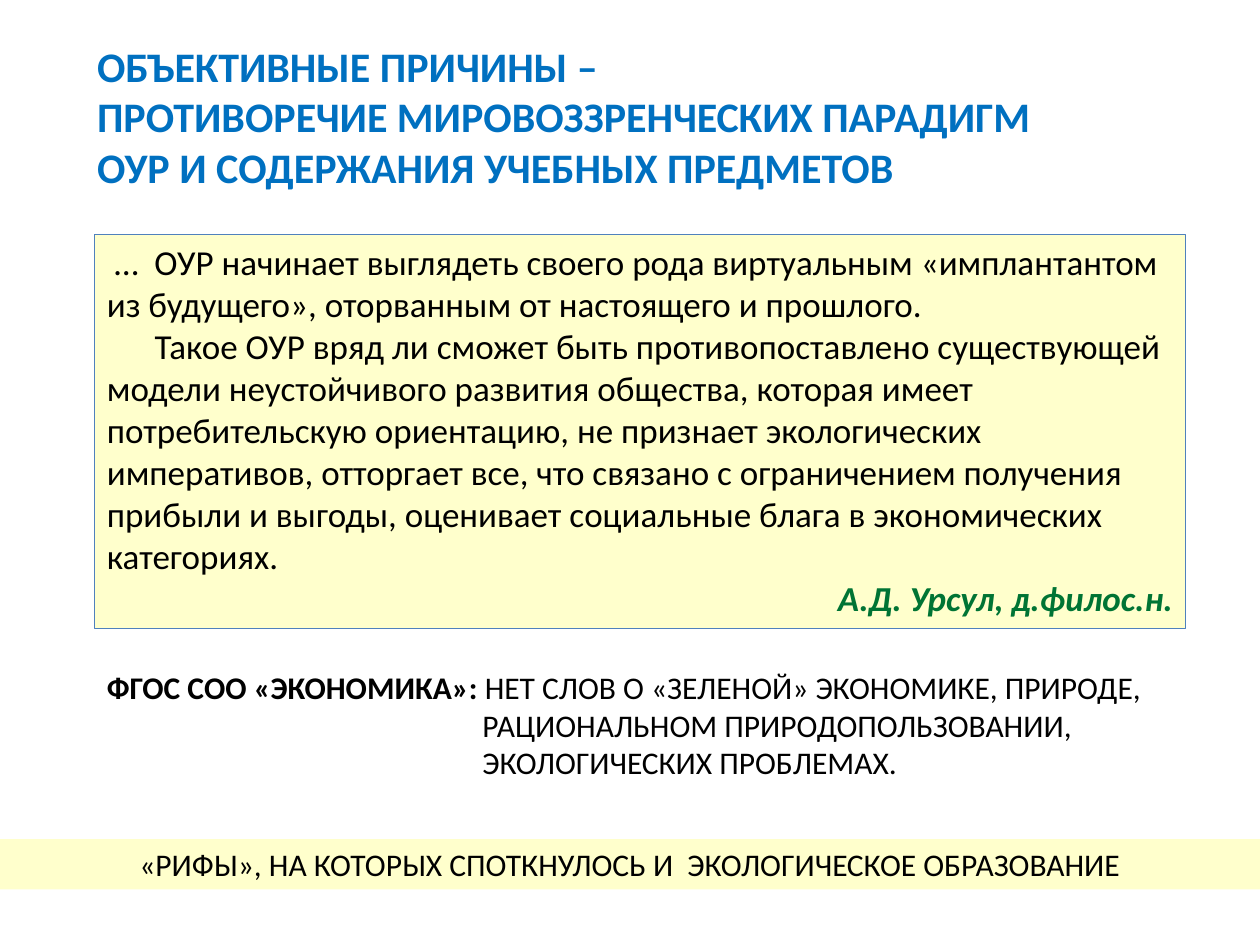
from dataclasses import dataclass

from pptx import Presentation
from pptx.dml.color import RGBColor
from pptx.enum.shapes import MSO_SHAPE
from pptx.enum.text import MSO_ANCHOR, MSO_AUTO_SIZE, PP_ALIGN
from pptx.util import Inches, Pt


@dataclass(frozen=True)
class Theme:
    font: str = "Calibri"
    title: RGBColor = RGBColor(0x00, 0x70, 0xC0)
    text: RGBColor = RGBColor(0x00, 0x00, 0x00)
    author: RGBColor = RGBColor(0x00, 0x74, 0x34)
    panel: RGBColor = RGBColor(0xFF, 0xFF, 0xCC)
    border: RGBColor = RGBColor(0x4F, 0x81, 0xBD)
    title_size: Pt = Pt(24)
    quote_size: Pt = Pt(20)
    note_size: Pt = Pt(18)


theme = Theme()


def write(sp, lines, size, color, align=PP_ALIGN.LEFT):
    tf = sp.text_frame
    tf.word_wrap = True
    tf.auto_size = MSO_AUTO_SIZE.NONE
    tf.vertical_anchor = MSO_ANCHOR.TOP
    tf.text = "\n".join(lines)
    for p in tf.paragraphs:
        p.alignment = align
        p.font.name = theme.font
        p.font.size = size
        p.font.color.rgb = color
    return tf.paragraphs


def indent(p, left, first):
    pPr = p._p.get_or_add_pPr()
    pPr.set("marL", str(Inches(left)))
    pPr.set("indent", str(Inches(first)))


prs = Presentation()
prs.slide_width, prs.slide_height = Inches(10), Inches(7.5)
s = prs.slides.add_slide(prs.slide_layouts[5])

title = s.shapes.title
title.left, title.top = Inches(0.67), Inches(0.27)
title.width, title.height = Inches(7.68), Inches(1.78)
title_lines = [
    "ОБЪЕКТИВНЫЕ ПРИЧИНЫ –",
    "ПРОТИВОРЕЧИЕ МИРОВОЗЗРЕНЧЕСКИХ ПАРАДИГМ",
    "ОУР И СОДЕРЖАНИЯ УЧЕБНЫХ ПРЕДМЕТОВ",
]
for p in write(title, title_lines, theme.title_size, theme.title):
    p.font.bold = True
title.text_frame.word_wrap = False

quote = s.shapes.add_shape(MSO_SHAPE.RECTANGLE, Inches(0.75), Inches(1.86), Inches(8.66), Inches(3.13))
banner = s.shapes.add_shape(MSO_SHAPE.RECTANGLE, 0, Inches(6.66), prs.slide_width, Inches(0.4))
for sp in (quote, banner):
    sp.shadow.inherit = False
    sp.fill.solid()
    sp.fill.fore_color.rgb = theme.panel
quote.line.color.rgb = theme.border
quote.line.width = Pt(0.75)
banner.line.fill.background()

quote_lines = [
    "…  ОУР начинает выглядеть своего рода виртуальным «имплантантом из будущего», "
    "оторванным от настоящего и прошлого.",
    "Такое ОУР вряд ли сможет быть противопоставлено существующей модели неустойчивого "
    "развития общества, которая имеет потребительскую ориентацию, не признает экологических "
    "императивов, отторгает все, что связано с ограничением получения прибыли и выгоды, "
    "оценивает социальные блага в экономических категориях.",
    "А.Д. Урсул, д.филос.н.",
]
opening, argument, author = write(quote, quote_lines, theme.quote_size, theme.text)
indent(opening, 0, 0.06)
indent(argument, 0, 0.38)
author.alignment = PP_ALIGN.RIGHT
author.font.color.rgb = theme.author
author.font.bold = author.font.italic = True

note = s.shapes.add_textbox(Inches(0.75), Inches(5.25), Inches(9.06), Inches(1.01))
note_lines = [
    "ФГОС СОО «ЭКОНОМИКА»: ",
    "РАЦИОНАЛЬНОМ ПРИРОДОПОЛЬЗОВАНИИ,",
    "ЭКОЛОГИЧЕСКИХ ПРОБЛЕМАХ.",
]
standard, *rest = write(note, note_lines, theme.note_size, theme.text)
standard.runs[0].font.bold = True
standard.add_run().text = "НЕТ СЛОВ О «ЗЕЛЕНОЙ» ЭКОНОМИКЕ, ПРИРОДЕ,"
for p in rest:
    indent(p, 2.98, 0)

banner_lines = ["«РИФЫ», НА КОТОРЫХ СПОТКНУЛОСЬ И  ЭКОЛОГИЧЕСКОЕ ОБРАЗОВАНИЕ"]
write(banner, banner_lines, theme.note_size, theme.text, PP_ALIGN.CENTER)

prs.save("out.pptx")
